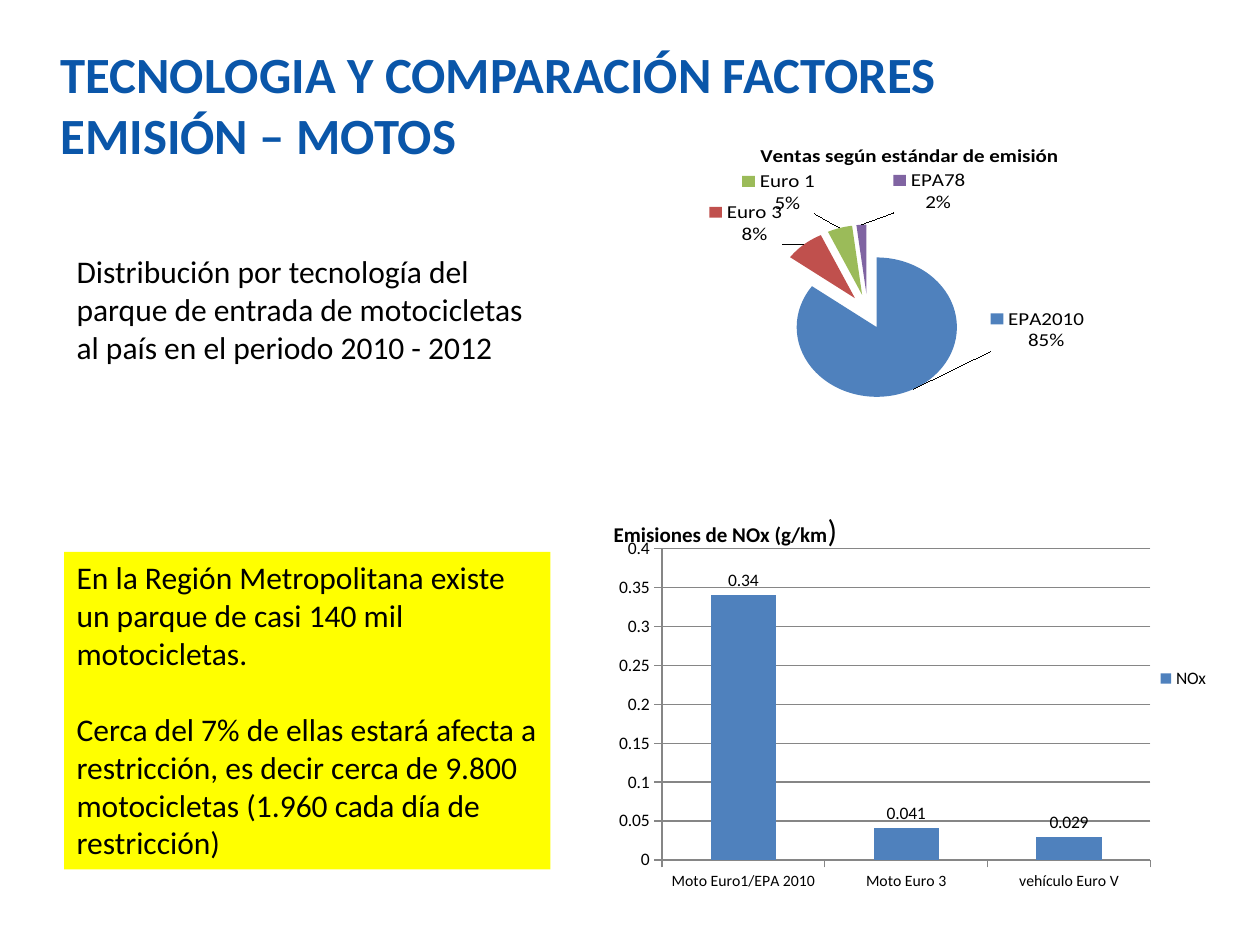
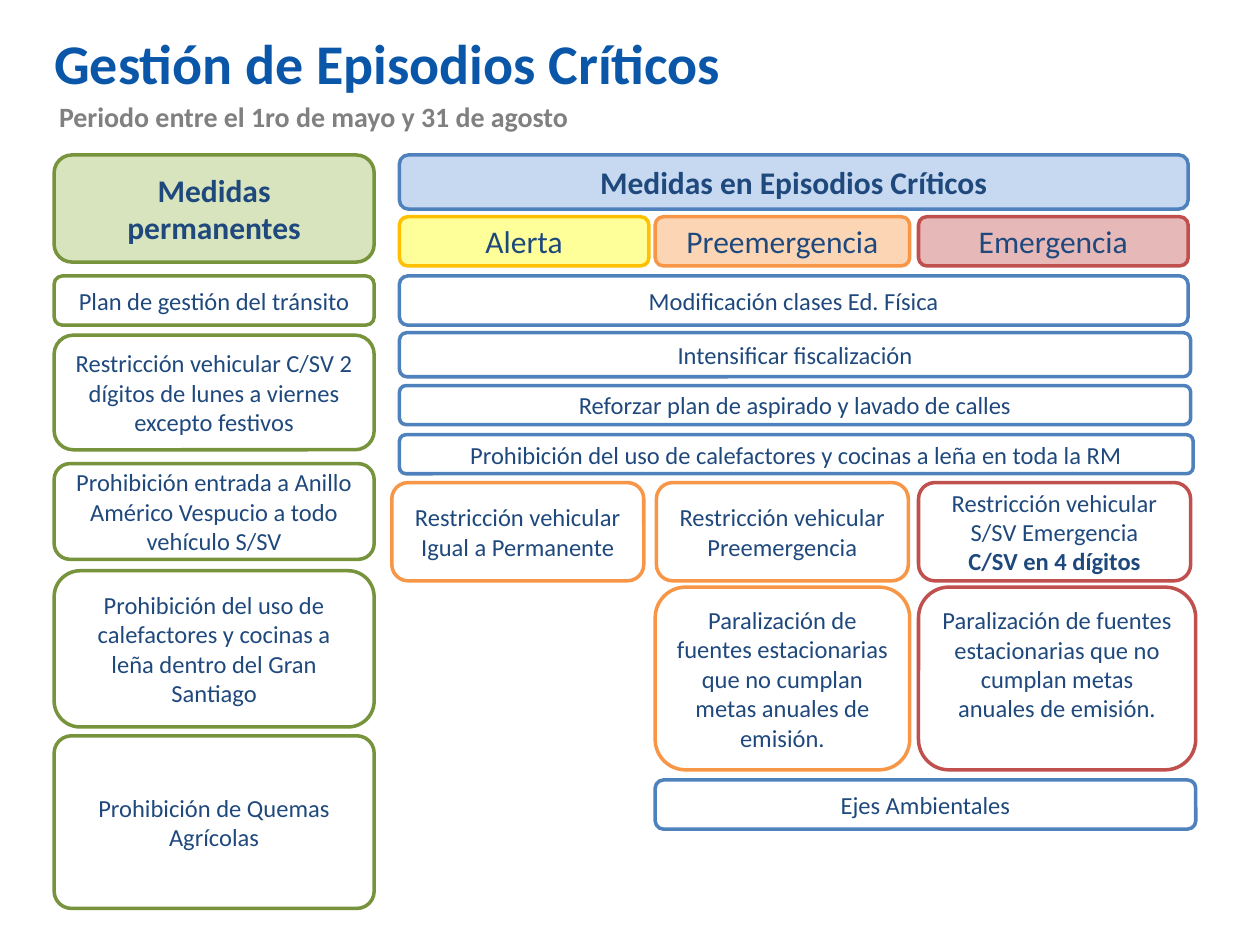
from pptx import Presentation
from pptx.chart.data import CategoryChartData
from pptx.dml.color import RGBColor
from pptx.enum.chart import XL_CHART_TYPE, XL_LABEL_POSITION, XL_LEGEND_POSITION, XL_TICK_MARK
from pptx.enum.shapes import MSO_SHAPE
from pptx.enum.text import MSO_ANCHOR, MSO_AUTO_SIZE, PP_ALIGN
from pptx.oxml import parse_xml
from pptx.oxml.ns import nsdecls
from pptx.util import Emu, Pt

PX = 9144
FONT = "Calibri"
BLACK, WHITE, TITLE, GREY, NAVY = "000000", "FFFFFF", "0A56A9", "808080", "1F497D"
GREEN, BLUE, ORANGE, RED, GOLD = "77933C", "4F81BD", "F79646", "C0504D", "FFC000"


def px(*values):
    return [Emu(v * PX) for v in values]


def rgb(value):
    return RGBColor.from_string(value)


def style_font(font, size, color, bold=False):
    font.name, font.size, font.bold = FONT, Pt(size), bold
    font.color.rgb = rgb(color)


def layout_xml(inner=False, edge=True, **parts):
    target = '<c:layoutTarget val="inner"/>' if inner else ""
    modes = '<c:xMode val="edge"/><c:yMode val="edge"/>' if edge else ""
    values = "".join(f'<c:{k} val="{v}"/>' for k, v in parts.items())
    return f'<c:layout {nsdecls("c")}><c:manualLayout>{target}{modes}{values}</c:manualLayout></c:layout>'


class Deck:
    def __init__(self):
        self.prs = Presentation()
        self.prs.slide_width, self.prs.slide_height = px(1000, 750)
        self.s = None

    def slide(self):
        self.s = self.prs.slides.add_slide(self.prs.slide_layouts[5])

    def add_runs(self, tf, paras, size, color, bold=False, align=PP_ALIGN.LEFT, gap=0):
        tf.word_wrap = True
        for i, runs in enumerate(paras):
            p = tf.paragraphs[0] if i == 0 else tf.add_paragraph()
            p.alignment = align
            p.space_before = Pt(gap if i else 0)
            for text, strong in runs:
                r = p.add_run()
                r.text = text
                style_font(r.font, size, color, bold or strong)

    def title(self, text, at, size, inset):
        sp = self.s.shapes.title
        sp.left, sp.top, sp.width, sp.height = px(*at)
        tf = sp.text_frame
        tf.auto_size = MSO_AUTO_SIZE.NONE
        tf.vertical_anchor = MSO_ANCHOR.MIDDLE
        tf.margin_left, tf.margin_right = px(inset, inset)
        tf.margin_top = tf.margin_bottom = px(inset // 2)[0]
        self.add_runs(tf, [[(text, True)]], size, TITLE)

    def text(self, paras, at, size, color=BLACK, bold=False, fill=None, gap=0, wrap=True):
        sp = self.s.shapes.add_textbox(*px(*at))
        if fill:
            sp.fill.solid()
            sp.fill.fore_color.rgb = rgb(fill)
        self.add_runs(sp.text_frame, [[(t, False)] for t in paras], size, color, bold, gap=gap)
        sp.text_frame.word_wrap = wrap

    def box(self, text, at, line, fill=WHITE, size=14, bold=False, extra=None, adj=None, bottom=5):
        sp = self.s.shapes.add_shape(MSO_SHAPE.ROUNDED_RECTANGLE, *px(*at))
        sp.shadow.inherit = False
        if adj:
            sp.adjustments[0] = adj
        sp.fill.solid()
        sp.fill.fore_color.rgb = rgb(fill)
        sp.line.color.rgb = rgb(line)
        sp.line.width = Pt(2)
        tf = sp.text_frame
        tf.vertical_anchor = MSO_ANCHOR.MIDDLE
        tf.margin_bottom = px(bottom)[0]
        paras = [[(text, bold)]] + ([[(extra, True)]] if extra else [])
        self.add_runs(tf, paras, size, NAVY, align=PP_ALIGN.CENTER)

    def chart(self, kind, at, name, points, title, title_at, plot_at, size):
        data = CategoryChartData()
        data.categories = list(points)
        data.add_series(name, list(points.values()))
        chart = self.s.shapes.add_chart(kind, *px(*at), data).chart
        style_font(chart.font, size, BLACK)
        chart.has_title = True
        p = chart.chart_title.text_frame.paragraphs[0]
        for text, pt, bold in title:
            r = p.add_run()
            r.text = text
            style_font(r.font, pt, BLACK, bold)
        for old in chart.element.xpath(".//c:title/c:layout | .//c:plotArea/c:layout"):
            old.getparent().remove(old)
        chart.element.xpath("./c:chart/c:title/c:tx")[0].addnext(
            parse_xml(layout_xml(x=title_at[0], y=title_at[1])))
        chart.element.xpath(".//c:plotArea")[0].insert(
            0, parse_xml(layout_xml(inner=True, **dict(zip("xywh", plot_at)))))
        return chart

    def columns(self, *args):
        chart = self.chart(XL_CHART_TYPE.COLUMN_CLUSTERED, *args)
        plot = chart.plots[0]
        plot.vary_by_categories = False
        plot.gap_width = 150
        fill = plot.series[0].format.fill
        fill.solid()
        fill.fore_color.rgb = rgb(BLUE)
        plot.has_data_labels = True
        labels = plot.data_labels
        labels.show_value = True
        labels.position = XL_LABEL_POSITION.OUTSIDE_END
        style_font(labels.font, 10, BLACK)
        for axis, size in ((chart.category_axis, 9), (chart.value_axis, 10)):
            axis.major_tick_mark = XL_TICK_MARK.OUTSIDE
            axis.format.line.color.rgb = rgb("868686")
            style_font(axis.tick_labels.font, size, BLACK)
        chart.value_axis.major_gridlines.format.line.color.rgb = rgb("868686")
        chart.has_legend = True
        chart.legend.position = XL_LEGEND_POSITION.RIGHT
        chart.legend.include_in_layout = False
        style_font(chart.legend.font, 10, BLACK)

    def pie(self, colors, offsets, *args):
        chart = self.chart(XL_CHART_TYPE.PIE, *args)
        chart.has_legend = False
        plot = chart.plots[0]
        plot.vary_by_categories = True
        for i, color in enumerate(colors):
            fill = plot.series[0].points[i].format.fill
            fill.solid()
            fill.fore_color.rgb = rgb(color)
        ser = chart.element.xpath(".//c:ser")[0]
        ser.xpath("./c:tx")[0].addnext(parse_xml(f'<c:explosion {nsdecls("c")} val="25"/>'))
        flags = (("LegendKey", 1), ("Val", 0), ("CatName", 1), ("SerName", 0), ("Percent", 1), ("BubbleSize", 0))
        show = '<c:dLblPos val="outEnd"/>' + "".join(f'<c:show{k} val="{v}"/>' for k, v in flags)
        show += "<c:separator>\n</c:separator>"
        labels = "".join(
            f'<c:dLbl><c:idx val="{i}"/>{layout_xml(edge=False, x=x, y=y)}{show}</c:dLbl>'
            for i, (x, y) in enumerate(offsets))
        ser.xpath("./c:cat")[0].addprevious(parse_xml(
            f'<c:dLbls {nsdecls("c")}>{labels}{show}<c:showLeaderLines val="1"/></c:dLbls>'))


def motorcycles(deck):
    deck.slide()
    deck.title("TECNOLOGIA Y COMPARACIÓN FACTORES EMISIÓN – MOTOS", (39, 37, 870, 90), 29, 9)
    deck.columns((453, 367, 517, 343), "NOx",
                 {"Moto Euro1/EPA 2010": 0.34, "Moto Euro 3": 0.041, "vehículo Euro V": 0.029},
                 [("Emisiones de NOx (g/km", 12, True), (")", 18, False)],
                 (0.06, 0.1), (0.14, 0.2, 0.75, 0.72), 10)
    deck.text(["En la Región Metropolitana existe un parque de casi 140 mil motocicletas.",
               "Cerca del 7% de ellas estará afecta a restricción, es decir cerca de 9.800 "
               "motocicletas (1.960 cada día de restricción)"],
              (51, 438, 386, 252), 18, fill="FFFF00", gap=22)
    deck.text(["Distribución por tecnología del parque de entrada de motocicletas al país "
               "en el periodo 2010 - 2012"], (51, 195, 394, 101), 18)
    deck.pie((BLUE, RED, "9BBB59", "8064A2"),
             ((0.13, -0.33), (-0.03, 0.02), (-0.04, -0.03), (0.12, -0.02)),
             (469, 107, 453, 241), "Series 1",
             {"EPA2010": 85, "Euro 3": 8, "Euro 1": 5, "EPA78": 2},
             [("Ventas según estándar de emisión", 12, True)],
             (0.29, 0.02), (0.26, 0.34, 0.45, 0.66), 12)


def episodes(deck):
    deck.slide()
    deck.title("Gestión de Episodios Críticos", (43, 24, 787, 50), 32, 0)
    deck.text(["Periodo entre el 1ro de mayo y 31 de agosto"], (37, 74, 432, 37), 16, GREY, True, wrap=False)
    deck.box("Medidas permanentes", (43, 123, 254, 85), GREEN, "D7E4BD", 18, True)
    deck.box("Medidas en Episodios Críticos", (317, 123, 626, 43), BLUE, "C6D9F1", 18, True)
    for level, x, w, line, fill in (("Alerta", 317, 198, GOLD, "FFFF99"),
                                    ("Preemergencia", 520, 202, ORANGE, "FCD5B5"),
                                    ("Emergencia", 729, 214, RED, "E6B9B8")):
        deck.box(level, (x, 172, w, 39), line, fill, 18)
    for measure, y, h, adj in (
            ("Plan de gestión del tránsito", 219, 39, None),
            ("Restricción vehicular C/SV 2 dígitos de lunes a viernes excepto festivos", 266, 91, None),
            ("Prohibición entrada a Anillo Américo Vespucio a todo vehículo S/SV", 368, 76, None),
            ("Prohibición del uso de calefactores y cocinas a leña dentro del Gran Santiago", 453, 124, None),
            ("Prohibición de Quemas Agrícolas", 584, 137, 0.1)):
        deck.box(measure, (43, y, 254, h), GREEN, adj=adj)
    for measure, x, y, w, h in (
            ("Modificación clases Ed. Física", 317, 219, 626, 39),
            ("Intensificar fiscalización", 317, 264, 628, 35),
            ("Reforzar plan de aspirado y lavado de calles", 317, 306, 628, 31),
            ("Prohibición del uso de calefactores y cocinas a leña en toda la RM", 317, 345, 630, 31),
            ("Ejes Ambientales", 520, 619, 429, 39)):
        deck.box(measure, (x, y, w, h), BLUE)
    for rule, x, w, line, extra in (
            ("Restricción vehicular Igual a Permanente", 311, 200, ORANGE, None),
            ("Restricción vehicular Preemergencia", 521, 200, ORANGE, None),
            ("Restricción vehicular S/SV Emergencia", 729, 216, RED, "C/SV en 4 dígitos")):
        deck.box(rule, (x, 383, w, 78), line, extra=extra)
    for x, w, line, bottom in ((520, 202, ORANGE, 5), (729, 220, RED, 28)):
        deck.box("Paralización de fuentes estacionarias que no cumplan metas anuales de emisión.",
                 (x, 466, w, 145), line, bottom=bottom)


def main():
    deck = Deck()
    motorcycles(deck)
    episodes(deck)
    deck.prs.save("out.pptx")


if __name__ == "__main__":
    main()
